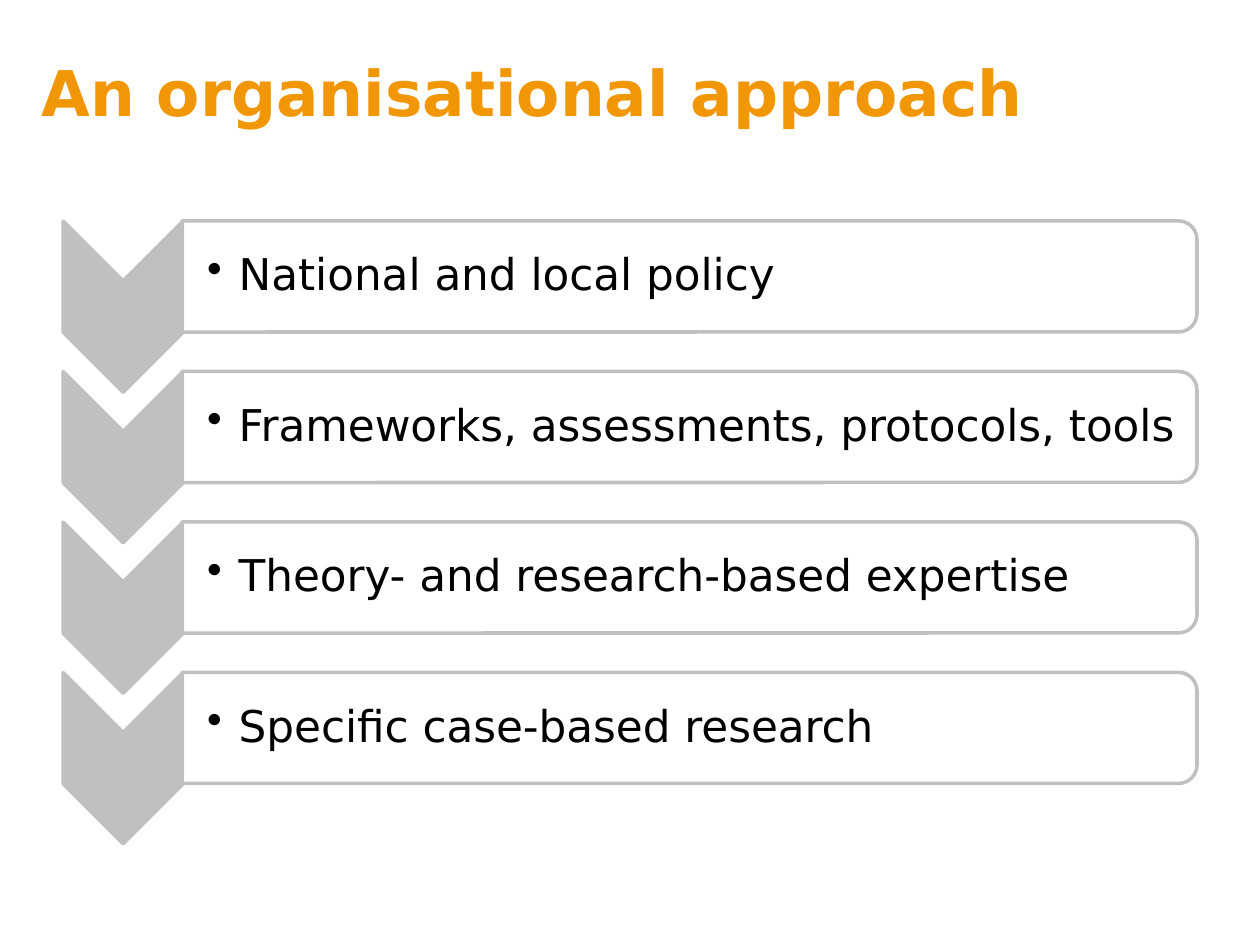
from dataclasses import dataclass

from lxml import etree
from pptx import Presentation
from pptx.dml.color import RGBColor
from pptx.enum import shapes, text
from pptx.oxml import ns
from pptx.util import Pt


@dataclass(frozen=True)
class Theme:
    font: str = "DejaVu Sans"
    title_color: RGBColor = RGBColor(0xF1, 0x97, 0x05)
    text_color: RGBColor = RGBColor(0, 0, 0)
    accent: RGBColor = RGBColor(0xC0, 0xC0, 0xC0)
    panel: RGBColor = RGBColor(0xFF, 0xFF, 0xFF)
    panel_opacity: int = 90
    title_size: int = 36
    body_size: int = 25
    line_width: int = 2


THEME = Theme()
STEPS = [
    "National and local policy",
    "Frameworks, assessments, protocols, tools",
    "Theory- and research-based expertise",
    "Specific case-based research",
]
FIRST_ROW_CENTER = 158
ROW_PITCH = 86
CHEVRON_DROP = 17.3


def style_paragraph(paragraph, size, color, bold=False):
    paragraph.line_spacing = 0.9
    font = paragraph.font
    font.name = THEME.font
    font.size = Pt(size)
    font.bold = bold
    font.color.rgb = color


def add_title(slide, wording):
    title = slide.shapes.title
    title.left, title.top, title.width, title.height = Pt(16.5), Pt(31.7), Pt(628), Pt(84)
    frame = title.text_frame
    frame.text = wording
    frame.auto_size = text.MSO_AUTO_SIZE.NONE
    frame.vertical_anchor = text.MSO_ANCHOR.TOP
    paragraph = frame.paragraphs[0]
    paragraph.alignment = text.PP_ALIGN.LEFT
    style_paragraph(paragraph, THEME.title_size, THEME.title_color, bold=True)


def add_turned_shape(slide, kind, center_x, center_y, width, height, fill):
    """Add a preset turned a quarter clockwise; width and height are before turning."""
    shape = slide.shapes.add_shape(
        kind, Pt(center_x - width / 2), Pt(center_y - height / 2), Pt(width), Pt(height)
    )
    shape.rotation = 90
    shape.shadow.inherit = False
    shape.fill.solid()
    shape.fill.fore_color.rgb = fill
    shape.line.color.rgb = THEME.accent
    shape.line.width = Pt(THEME.line_width)
    return shape


def set_opacity(shape, percent):
    color = shape.fill._xPr.find(ns.qn("a:solidFill"))[0]
    etree.SubElement(color, ns.qn("a:alpha"), val=str(percent * 1000))


def add_bullet(paragraph, indent):
    properties = paragraph._p.get_or_add_pPr()
    properties.set("marL", str(Pt(indent)))
    properties.set("indent", str(-Pt(indent)))
    etree.SubElement(properties, ns.qn("a:buChar"), char="•")


def add_step_text(slide, wording, center_y):
    height = 57.6
    box = slide.shapes.add_textbox(Pt(104.4), Pt(center_y - height / 2), Pt(576.7), Pt(height))
    frame = box.text_frame
    frame.word_wrap = True
    frame.vertical_anchor = text.MSO_ANCHOR.MIDDLE
    frame.margin_left = Pt(14)
    frame.margin_top = frame.margin_right = frame.margin_bottom = Pt(1.25)
    paragraph = frame.paragraphs[0]
    paragraph.text = wording
    paragraph.level = 1
    add_bullet(paragraph, 18)
    paragraph.space_after = Pt(3.75)
    style_paragraph(paragraph, THEME.body_size, THEME.text_color)


def add_step(slide, wording, center_y):
    preset = shapes.MSO_SHAPE
    add_turned_shape(
        slide, preset.CHEVRON, 70.3, center_y + CHEVRON_DROP, 97.8, 68.4, THEME.accent
    )
    panel = add_turned_shape(
        slide, preset.ROUND_2_SAME_RECTANGLE, 394, center_y, 63.5, 580, THEME.panel
    )
    set_opacity(panel, THEME.panel_opacity)
    add_step_text(slide, wording, center_y)


def main():
    presentation = Presentation()
    presentation.slide_width, presentation.slide_height = Pt(720), Pt(540)
    slide = presentation.slides.add_slide(presentation.slide_layouts[5])
    add_title(slide, "An organisational approach")
    for row, wording in enumerate(STEPS):
        add_step(slide, wording, FIRST_ROW_CENTER + row * ROW_PITCH)
    presentation.save("out.pptx")


if __name__ == "__main__":
    main()
